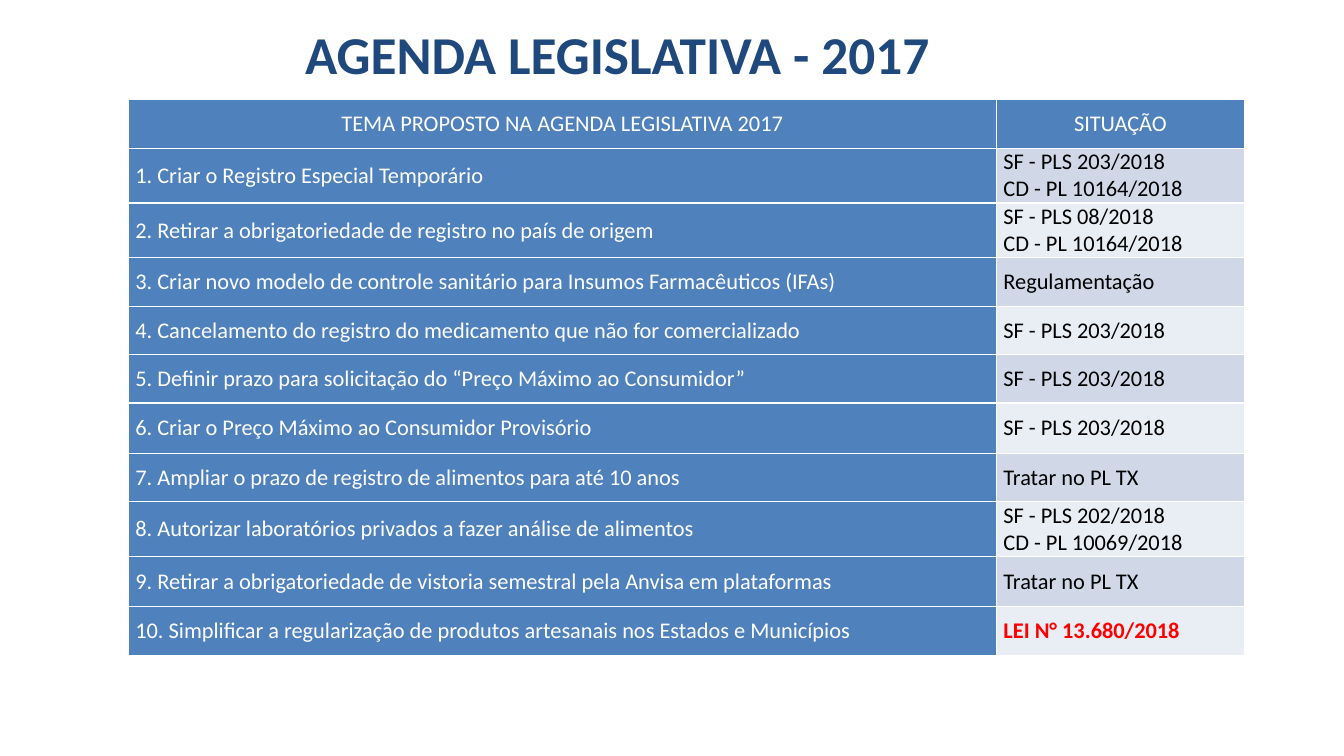
from dataclasses import dataclass

from lxml import etree
from pptx import Presentation
from pptx import util as u
from pptx.dml.color import RGBColor
from pptx.enum import text
from pptx.oxml import ns

SLIDE_WIDTH, SLIDE_HEIGHT = u.Inches(13.33), u.Inches(7.5)


@dataclass(frozen=True)
class Theme:
    font: str = "Calibri"
    title_size: int = 38
    table_size: int = 16
    border_width: int = 1
    navy: str = "1F497D"
    blue: str = "4F81BD"
    bands: tuple = ("D0D8E8", "E9EDF4")
    white: str = "FFFFFF"
    black: str = "000000"
    red: str = "FF0000"


THEME = Theme()

HEADINGS = ("TEMA PROPOSTO NA AGENDA LEGISLATIVA 2017", "SITUAÇÃO")
TOPICS = [
    ("Criar o Registro Especial Temporário", "SF - PLS 203/2018\nCD - PL 10164/2018"),
    ("Retirar a obrigatoriedade de registro no país de origem",
     "SF - PLS 08/2018\nCD - PL 10164/2018"),
    ("Criar novo modelo de controle sanitário para Insumos Farmacêuticos (IFAs)",
     "Regulamentação"),
    ("Cancelamento do registro do medicamento que não for comercializado",
     "SF - PLS 203/2018"),
    ("Definir prazo para solicitação do “Preço Máximo ao Consumidor”",
     "SF - PLS 203/2018"),
    ("Criar o Preço Máximo ao Consumidor Provisório", "SF - PLS 203/2018"),
    ("Ampliar o prazo de registro de alimentos para até 10 anos", "Tratar no PL TX"),
    ("Autorizar laboratórios privados a fazer análise de alimentos",
     "SF - PLS 202/2018\nCD - PL 10069/2018"),
    ("Retirar a obrigatoriedade de vistoria semestral pela Anvisa em plataformas",
     "Tratar no PL TX"),
    ("Simplificar a regularização de produtos artesanais nos Estados e Municípios",
     "LEI N° 13.680/2018"),
]
ENACTED = "LEI N°"

# Table grid: widths in inches; a few rows are slightly taller than the rest
COLUMN_WIDTHS = (8.61, 2.46)
ROW_HEIGHT, TALL_ROW_HEIGHT = 0.48, 0.5
TALL_ROWS = (2, 6, 9)


def share(x, y, width, height):
    """Turn shares of the slide's size into lengths."""
    return (int(SLIDE_WIDTH * x), int(SLIDE_HEIGHT * y),
            int(SLIDE_WIDTH * width), int(SLIDE_HEIGHT * height))


def write_text(frame, content, *, size, color, bold=False,
               align=text.PP_ALIGN.LEFT, line_spacing=1.0):
    """Fill a text frame, one paragraph for each line of content."""
    frame.word_wrap = True
    frame.text = content
    for paragraph in frame.paragraphs:
        paragraph.alignment = align
        paragraph.line_spacing = line_spacing
        paragraph.space_before = u.Pt(0)
        for run in paragraph.runs:
            run.font.name = THEME.font
            run.font.size = u.Pt(size)
            run.font.bold = bold
            run.font.color.rgb = RGBColor.from_string(color)


def add_borders(cell):
    """Draw white lines on the four sides; they precede the fill in the XML."""
    properties = cell._tc.get_or_add_tcPr()
    for index, side in enumerate(("lnL", "lnR", "lnT", "lnB")):
        line = etree.Element(ns.qn(f"a:{side}"), w=str(u.Pt(THEME.border_width)))
        fill = etree.SubElement(line, ns.qn("a:solidFill"))
        etree.SubElement(fill, ns.qn("a:srgbClr"), val=THEME.white)
        properties.insert(index, line)


def format_cell(cell, content, *, fill, **text_format):
    cell.margin_left = cell.margin_right = u.Inches(0.07)
    cell.margin_top = cell.margin_bottom = 0
    cell.vertical_anchor = text.MSO_ANCHOR.MIDDLE
    cell.fill.solid()
    cell.fill.fore_color.rgb = RGBColor.from_string(fill)
    add_borders(cell)
    write_text(cell.text_frame, content, size=THEME.table_size, **text_format)


def place_title(slide, content):
    title = slide.shapes.title
    title.left, title.top, title.width, title.height = share(0.092, 0.028, 0.735, 0.096)
    title.text_frame.auto_size = text.MSO_AUTO_SIZE.NONE
    title.text_frame.vertical_anchor = text.MSO_ANCHOR.MIDDLE
    write_text(title.text_frame, content, size=THEME.title_size, color=THEME.navy,
               bold=True, align=text.PP_ALIGN.CENTER, line_spacing=0.9)


def add_agenda_table(slide):
    frame = slide.shapes.add_table(len(TOPICS) + 1, len(HEADINGS),
                                   *share(0.0955, 0.132, 0.83, 0.712))
    table = frame.table
    table.first_row = table.horz_banding = False
    for column, width in zip(table.columns, COLUMN_WIDTHS):
        column.width = u.Inches(width)
    for index, row in enumerate(table.rows):
        row.height = u.Inches(TALL_ROW_HEIGHT if index in TALL_ROWS else ROW_HEIGHT)

    # Header row
    for column, heading in enumerate(HEADINGS):
        format_cell(table.cell(0, column), heading, fill=THEME.blue,
                    color=THEME.white, align=text.PP_ALIGN.CENTER)

    # Numbered topics, each with its status
    for number, (topic, status) in enumerate(TOPICS, start=1):
        enacted = status.startswith(ENACTED)
        format_cell(table.cell(number, 0), f"{number}. {topic}",
                    fill=THEME.blue, color=THEME.white)
        format_cell(table.cell(number, 1), status,
                    fill=THEME.bands[(number - 1) % 2], bold=enacted,
                    color=THEME.red if enacted else THEME.black)


def main():
    presentation = Presentation()
    presentation.slide_width, presentation.slide_height = SLIDE_WIDTH, SLIDE_HEIGHT
    slide = presentation.slides.add_slide(presentation.slide_layouts.get_by_name("Title Only"))
    add_agenda_table(slide)
    place_title(slide, "AGENDA LEGISLATIVA - 2017")
    presentation.save("out.pptx")


if __name__ == "__main__":
    main()
